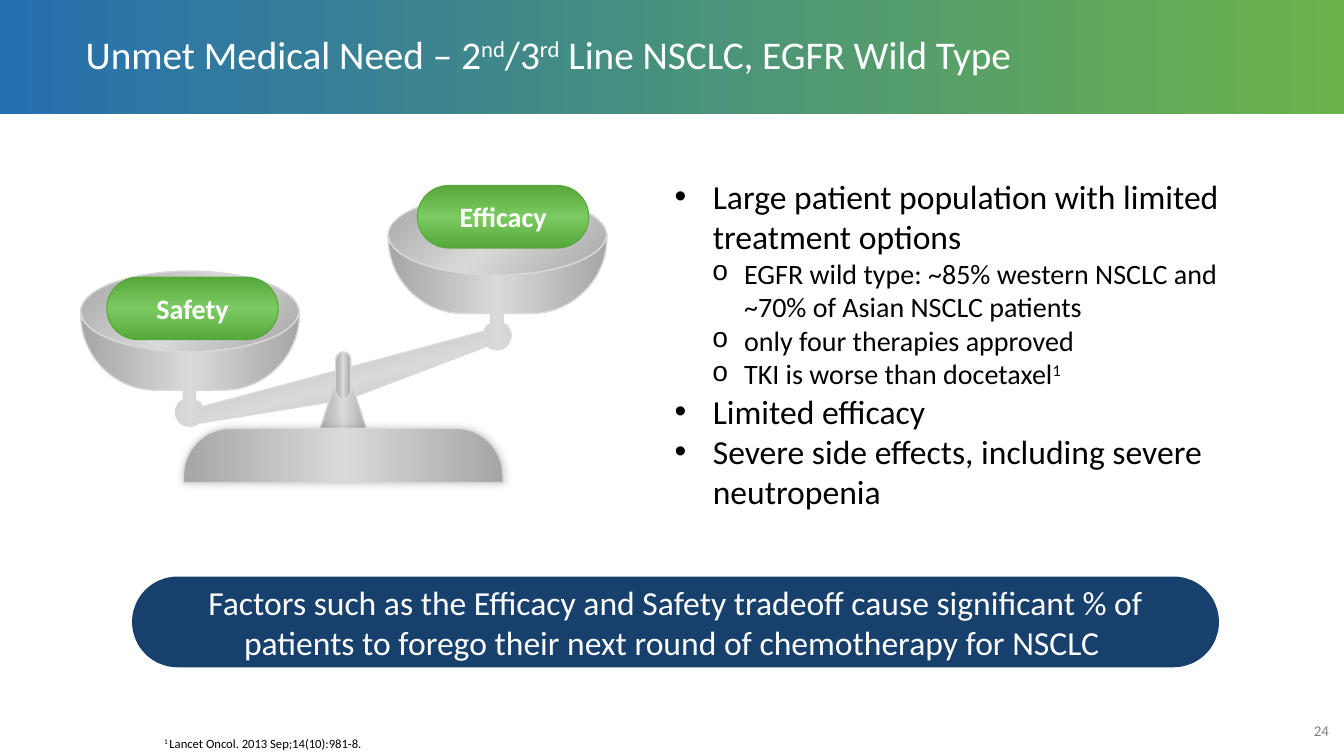
from lxml.etree import SubElement
from pptx import Presentation
from pptx.dml.color import RGBColor
from pptx.enum.shapes import MSO_SHAPE as SHAPE
from pptx.enum.text import MSO_ANCHOR as ANCHOR, MSO_AUTO_SIZE as FIT, PP_ALIGN as ALIGN
from pptx.oxml.ns import qn
from pptx.util import Pt

SCALE = 9144
FONT = "Calibri"
SILVER = [(0, "A6A6A6"), (50, "D9D9D9"), (100, "A6A6A6")]
GREEN = [(0, "55A839"), (50, "7CCA62"), (100, "55A839")]
RIM = [(108, 0), (164, 0, 210, 16, 216, 36), (217, 40), (216, 44),
       (210, 64, 164, 80, 108, 80), (48, 80, 0, 62, 0, 40), (0, 18, 48, 0, 108, 0)]
BOWL = [(0, 0), (0, 22, 48, 40, 108, 40), (164, 40, 210, 24, 216, 4), (217, 0), (217, 3),
        (217, 44, 183, 78, 142, 78), (114, 78), (114, 88), (118, 90),
        (120, 93, 122, 96, 122, 100), (122, 107, 116, 114, 108, 114),
        (100, 114, 94, 107, 94, 100), (94, 96, 96, 93, 98, 90),
        (102, 88), (102, 78), (74, 78), (33, 78, 0, 44, 0, 3)]
BASE = [(47, 0), (271, 0), (296, 0, 317, 21, 317, 47), (317, 54), (0, 54), (0, 47),
        (0, 21, 21, 0, 47, 0)]


def px(*lengths):
    """Turn px lengths into EMU."""
    return [round(length * SCALE) for length in lengths]


def color(target, value):
    """Set a hex colour on a solid fill, line or font colour."""
    target.rgb = RGBColor.from_string(value)


def gradient(shape, stops, angle=0, radial=False):
    """Fill a shape with a linear gradient or one centred on its corner."""
    shape.fill.gradient()
    grad = shape._element.spPr.find(qn("a:gradFill"))
    for child in list(grad):
        grad.remove(child)
    stop_list = SubElement(grad, qn("a:gsLst"))
    for position, value in stops:
        stop = SubElement(stop_list, qn("a:gs"), pos=str(position * 1000))
        SubElement(stop, qn("a:srgbClr"), val=value)
    if radial:
        focus = SubElement(grad, qn("a:path"), path="circle")
        SubElement(focus, qn("a:fillToRect"), l="100000", t="100000")
    else:
        SubElement(grad, qn("a:lin"), ang=str(angle * 60000), scaled="0")


def outline(shape, value=None, width=1):
    """Remove the shadow and set or hide the line."""
    shape.shadow.inherit = False
    if value:
        color(shape.line.color, value)
        shape.line.width = Pt(width)
    else:
        shape.line.fill.background()


def silver(shape, radial=False):
    """Give a part of the scale its metal look."""
    gradient(shape, SILVER, radial=radial)
    outline(shape, "D9D9D9")
    return shape


def add_run(paragraph, text, size, value, bold=False, raised=False):
    """Add one formatted run."""
    run = paragraph.add_run()
    run.text = text
    run.font.name, run.font.size, run.font.bold = FONT, Pt(size), bold
    color(run.font.color, value)
    if raised:
        run._r.get_or_add_rPr().set("baseline", "30000")


def frame_of(shape, anchor=ANCHOR.TOP):
    """Prepare a wrapping text frame of fixed size."""
    frame = shape.text_frame
    frame.word_wrap, frame.auto_size, frame.vertical_anchor = True, FIT.NONE, anchor
    return frame


def place(shape, box):
    """Move a placeholder into a box."""
    shape.left, shape.top, shape.width, shape.height = px(*box)


def add_outline(slide, x, y, steps, radial=False):
    """Draw a closed outline; steps of six numbers are curves."""
    start, *rest = [px(x + step[-2], y + step[-1]) for step in steps]
    builder = slide.shapes.build_freeform(*start, scale=1.0)
    builder.add_line_segments(rest, close=True)
    shape = builder.convert_to_shape()
    segments = list(shape._element.iter(qn("a:lnTo")))
    for segment, step in zip(segments, steps[1:]):
        if len(step) == 6:
            curve = SubElement(segment.getparent(), qn("a:cubicBezTo"))
            for i in (0, 2, 4):
                across, down = px(*step[i:i + 2])
                SubElement(curve, qn("a:pt"), x=str(across), y=str(down))
            segment.getparent().replace(segment, curve)
    return silver(shape, radial)


def add_header(slide, box):
    """Draw the colour band with the title on it."""
    x, y, width, height = box
    band = slide.shapes.add_shape(SHAPE.RECTANGLE, *px(*box))
    gradient(band, [(0, "266FAF"), (100, "6BB34B")])
    outline(band)
    title = slide.shapes.title
    slide.shapes._spTree.append(title._element)
    place(title, (x + 75, y, 1150, height))
    paragraph = frame_of(title, ANCHOR.MIDDLE).paragraphs[0]
    paragraph.alignment, paragraph.line_spacing = ALIGN.LEFT, 0.9
    pieces = ["Unmet Medical Need – 2", "nd", "/3", "rd", " Line NSCLC, EGFR Wild Type"]
    for i, piece in enumerate(pieces):
        add_run(paragraph, piece, 28, "FFFFFF", raised=i % 2 == 1)


def add_pan(slide, x, y):
    """Draw one pan of the scale with its rim, stem and joint."""
    add_outline(slide, x, y, RIM, radial=True)
    add_outline(slide, x, y + 40, BOWL)


def add_weight(slide, x, y, label):
    """Draw a labelled green weight."""
    weight = slide.shapes.add_shape(SHAPE.ROUNDED_RECTANGLE, *px(x, y, 170, 62))
    weight.adjustments[0] = 0.5
    gradient(weight, GREEN, 270)
    outline(weight, "55A839", 0.75)
    paragraph = frame_of(weight, ANCHOR.MIDDLE).paragraphs[0]
    paragraph.alignment = ALIGN.CENTER
    add_run(paragraph, label, 20, "FFFFFF", bold=True)


def add_scale(slide, box):
    """Draw the tilted scale weighing safety against efficacy."""
    x, y, width, height = box
    beam = slide.shapes.add_shape(SHAPE.PENTAGON, *px(x + 246, y + 50, 30, 295))
    beam.rotation = 75
    silver(beam)
    add_pan(slide, x, y + 85)
    add_pan(slide, x + 305, y + 9)
    silver(slide.shapes.add_shape(SHAPE.ISOSCELES_TRIANGLE, *px(x + 234, y + 171, 53, 81)))
    pin = slide.shapes.add_shape(SHAPE.ROUNDED_RECTANGLE, *px(x + 253, y + 165, 15, 47))
    pin.adjustments[0] = 0.5
    silver(pin)
    base = add_outline(slide, x + 102, y + height - 54, BASE)
    effects = base._element.spPr.find(qn("a:effectLst"))
    shade = SubElement(effects, qn("a:outerShdw"), blurRad=str(Pt(6)), dist="0", dir="13500000")
    tone = SubElement(shade, qn("a:srgbClr"), val="000000")
    SubElement(tone, qn("a:alpha"), val="20000")
    add_weight(slide, x + 334, y, "Efficacy")
    add_weight(slide, x + 26, y + 91, "Safety")


def add_needs(slide, box):
    """Fill the body placeholder with the two-level list of needs."""
    body = slide.placeholders[1]
    slide.shapes._spTree.append(body._element)
    place(body, box)
    frame = frame_of(body)
    levels = [(24, 38, 38, "•", "Arial"), (20, 69, 32, "o", "Courier New")]
    needs = [
        (0, "Large patient population with limited treatment options", ""),
        (1, "EGFR wild type: ~85% western NSCLC and ~70% of Asian NSCLC patients", ""),
        (1, "only four therapies approved", ""),
        (1, "TKI is worse than docetaxel", "1"),
        (0, "Limited efficacy", ""),
        (0, "Severe side effects, including severe neutropenia", ""),
    ]
    for i, (level, need, reference) in enumerate(needs):
        paragraph = frame.add_paragraph() if i else frame.paragraphs[0]
        size, margin, hanging, bullet, bullet_font = levels[level]
        paragraph.level = level
        paragraph.space_before = Pt(0)
        properties = paragraph._p.get_or_add_pPr()
        properties.set("marL", str(px(margin)[0]))
        properties.set("indent", str(px(-hanging)[0]))
        SubElement(properties, qn("a:buFont"), typeface=bullet_font)
        SubElement(properties, qn("a:buChar"), char=bullet)
        add_run(paragraph, need, size, "000000")
        if reference:
            add_run(paragraph, reference, size, "000000", raised=True)


def add_conclusion(slide, box):
    """Draw the rounded conclusion bar."""
    bar = slide.shapes.add_shape(SHAPE.ROUNDED_RECTANGLE, *px(*box))
    bar.adjustments[0] = 0.5
    bar.fill.solid()
    color(bar.fill.fore_color, "17406D")
    outline(bar)
    frame = frame_of(bar, ANCHOR.MIDDLE)
    frame.margin_top = frame.margin_bottom = 0
    paragraph = frame.paragraphs[0]
    paragraph.alignment = ALIGN.CENTER
    add_run(paragraph, "Factors such as the Efficacy and Safety tradeoff cause significant % of "
            "patients to forego their next round of chemotherapy for NSCLC ", 24, "FFFFFF")


def add_footer(slide, box):
    """Place the citation and the page number."""
    x, y, width, height = box
    citation = slide.shapes.add_textbox(*px(x, y, 1105, height))
    paragraph = frame_of(citation, ANCHOR.BOTTOM).paragraphs[0]
    add_run(paragraph, "1 ", 9, "000000", raised=True)
    add_run(paragraph, "Lancet Oncol. 2013 Sep;14(10):981-8.", 9, "000000")
    page = slide.shapes.add_textbox(*px(x + width - 56, y + 39, 56, 28))
    paragraph = frame_of(page).paragraphs[0]
    paragraph.alignment = ALIGN.RIGHT
    add_run(paragraph, "24", 10.7, "808080")


def main():
    """Build and save the slide."""
    deck = Presentation()
    deck.slide_width, deck.slide_height = px(1333, 750)
    slide = deck.slides.add_slide(deck.slide_layouts[1])
    add_header(slide, (0, 0, 1333, 113))
    add_scale(slide, (80, 184, 522, 295))
    add_needs(slide, (659, 169, 568, 347))
    add_conclusion(slide, (131, 572, 1078, 90))
    add_footer(slide, (153, 672, 1175, 78))
    deck.save("out.pptx")


if __name__ == "__main__":
    main()
